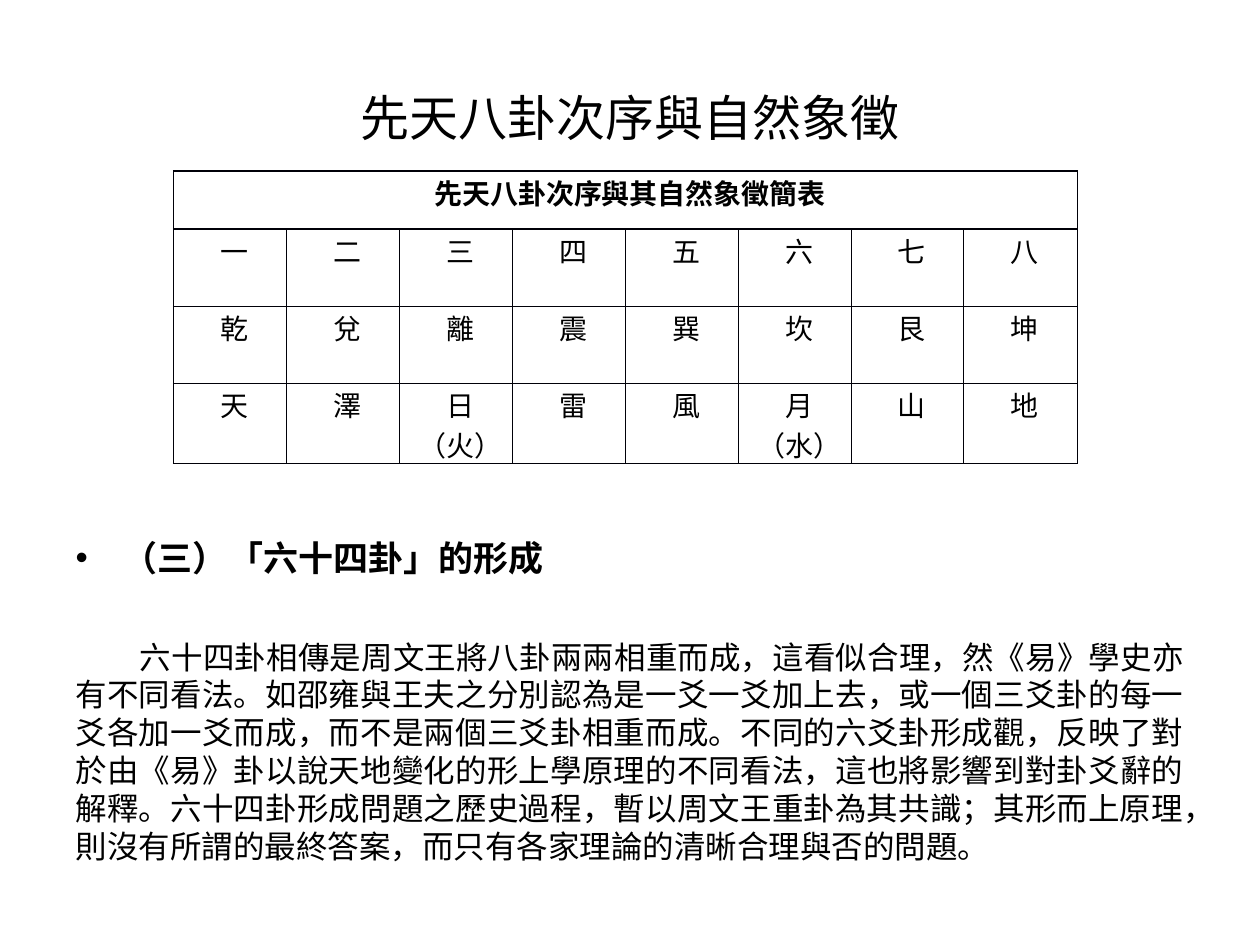
from dataclasses import dataclass
from typing import Any

from lxml.etree import SubElement
from pptx import Presentation
from pptx.dml.color import RGBColor
from pptx.enum.text import MSO_ANCHOR, MSO_AUTO_SIZE, PP_ALIGN as Align
from pptx.oxml.ns import qn
from pptx.util import Pt

BLACK = RGBColor(0, 0, 0)
BORDER = RGBColor(0, 0, 8)

HEADING = "（三）「六十四卦」的形成"
EXPLANATION = (
    "六十四卦相傳是周文王將八卦兩兩相重而成，這看似合理，然《易》學史亦有不同看法。"
    "如邵雍與王夫之分別認為是一爻一爻加上去，或一個三爻卦的每一爻各加一爻而成，"
    "而不是兩個三爻卦相重而成。不同的六爻卦形成觀，反映了對於由《易》卦以說天地變化的"
    "形上學原理的不同看法，這也將影響到對卦爻辭的解釋。六十四卦形成問題之歷史過程，"
    "暫以周文王重卦為其共識；其形而上原理，則沒有所謂的最終答案，"
    "而只有各家理論的清晰合理與否的問題。"
)
TRIGRAMS = [
    "一 二 三 四 五 六 七 八".split(),
    "乾 兌 離 震 巽 坎 艮 坤".split(),
    "天 澤 日（火） 雷 風 月（水） 山 地".split(),
]
COLUMN_WIDTHS = [64.6] * 6 + [63.9, 65.3]
ROW_HEIGHTS = [33.2, 44.1, 44.1, 45.8]


def write(paragraph, text, size=16, bold=False, font="Roboto", align=Align.CENTER,
          before=0, after=0, spacing=1.0, margin=0, indent=0, bullet=None):
    paragraph.alignment = align
    paragraph.space_before, paragraph.space_after = Pt(before), Pt(after)
    paragraph.line_spacing = spacing
    properties = paragraph._p.get_or_add_pPr()
    properties.set("marL", str(Pt(margin)))
    properties.set("indent", str(Pt(indent)))
    if bullet:
        SubElement(properties, qn("a:buFont"), typeface="Arial")
        SubElement(properties, qn("a:buChar"), char=bullet)
    else:
        SubElement(properties, qn("a:buNone"))
    run = paragraph.add_run()
    run.text = text
    run.font.size, run.font.bold, run.font.name = Pt(size), bold, font
    run.font.color.rgb = BLACK
    run_properties = run._r.get_or_add_rPr()
    run_properties.set("lang", "zh-CN")
    SubElement(run_properties, qn("a:ea"), typeface=font)


@dataclass
class SlideBuilder:
    """Hold the text style and the slide that is being filled."""

    slide: Any
    body_font: str = "Noto Sans CJK TC"
    cell_spacing: float = 1.22

    def place(self, shape, left, top, width, height):
        shape.left, shape.top = Pt(left), Pt(top)
        shape.width, shape.height = Pt(width), Pt(height)
        shape.text_frame.auto_size = MSO_AUTO_SIZE.NONE
        return shape.text_frame

    def title(self, text, *box):
        frame = self.place(self.slide.shapes.title, *box)
        frame.vertical_anchor = MSO_ANCHOR.MIDDLE
        write(frame.paragraphs[0], text, size=28)

    def body(self, heading, explanation, *box):
        frame = self.place(self.slide.placeholders[1], *box)
        style = dict(font=self.body_font, align=Align.JUSTIFY)
        write(frame.paragraphs[0], heading, size=20, bold=True,
              margin=27, indent=-27, bullet="•", **style)
        write(frame.add_paragraph(), explanation, size=18, before=33.8, indent=36.8, **style)

    def cell(self, cell, text, bold=False):
        cell.margin_left = cell.margin_right = Pt(5)
        cell.margin_top = cell.margin_bottom = 0
        write(cell.text_frame.paragraphs[0], text, bold=bold, after=5, margin=5,
              spacing=self.cell_spacing)

    def border(self, cell):
        properties = cell._tc.get_or_add_tcPr()
        for side in ("a:lnL", "a:lnR", "a:lnT", "a:lnB"):
            line = SubElement(properties, qn(side), w=str(Pt(1)))
            fill = SubElement(line, qn("a:solidFill"))
            SubElement(fill, qn("a:srgbClr"), val=str(BORDER))
        cell.fill.background()

    def table(self, caption, rows, left, top, widths, heights):
        table = self.slide.shapes.add_table(
            len(heights), len(widths), Pt(left), Pt(top),
            Pt(sum(widths)), Pt(sum(heights))).table
        table.first_row = table.horz_banding = False
        for column, width in zip(table.columns, widths):
            column.width = Pt(width)
        for row, height in zip(table.rows, heights):
            row.height = Pt(height)
        for cell in table.iter_cells():
            self.border(cell)
        table.cell(0, 0).merge(table.cell(0, len(widths) - 1))
        self.cell(table.cell(0, 0), caption, bold=True)
        for row_index, row in enumerate(rows, start=1):
            for column_index, text in enumerate(row):
                self.cell(table.cell(row_index, column_index), text)


def main():
    presentation = Presentation()
    presentation.slide_width, presentation.slide_height = Pt(720), Pt(540)
    builder = SlideBuilder(presentation.slides.add_slide(presentation.slide_layouts[1]))
    builder.title("先天八卦次序與自然象徵", 36, 21.6, 648, 90)
    builder.body(HEADING, EXPLANATION, 36, 303, 648, 214.7)
    builder.table("先天八卦次序與其自然象徵簡表", TRIGRAMS, 99.2, 97.8,
                  COLUMN_WIDTHS, ROW_HEIGHTS)
    presentation.save("out.pptx")


if __name__ == "__main__":
    main()
